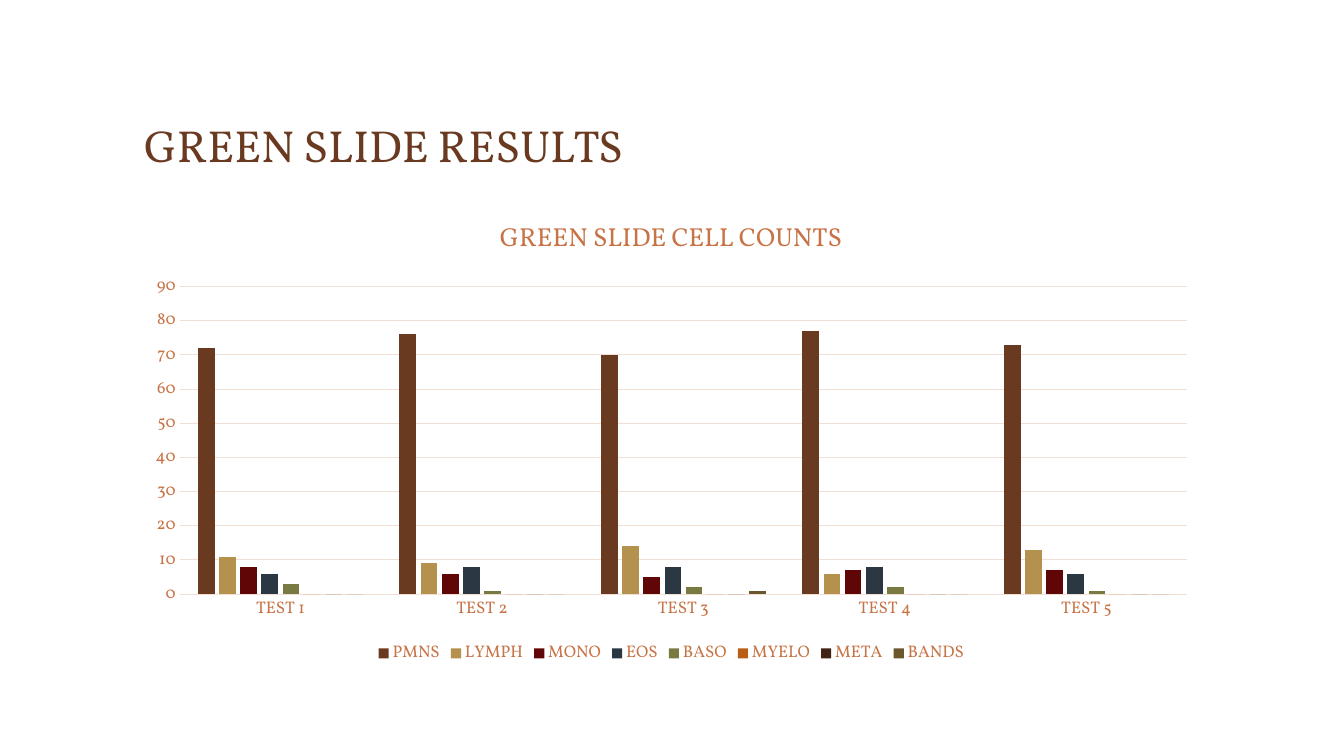
from dataclasses import dataclass

from pptx import Presentation
from pptx.chart.data import CategoryChartData
from pptx.dml.color import RGBColor
from pptx.enum.chart import XL_CHART_TYPE as ChartType
from pptx.enum.chart import XL_LEGEND_POSITION as LegendPosition
from pptx.enum.chart import XL_TICK_MARK as TickMark
from pptx.enum.text import MSO_ANCHOR as Anchor
from pptx.util import Cm, Pt


@dataclass(frozen=True)
class Theme:
    font: str = "Vollkorn"
    heading: str = "6A3A20"
    label: str = "C77345"
    grid: str = "F2DFD4"
    heading_size: float = 32
    chart_title_size: float = 18.6
    label_size: float = 12
    grid_width: float = 0.75


THEME = Theme()

TESTS = [f"TEST {number}" for number in range(1, 6)]
CELL_COUNTS = [
    ("PMNS", (72, 76, 70, 77, 73), "6A3A20"),
    ("LYMPH", (11, 9, 14, 6, 13), "B4914C"),
    ("MONO", (8, 6, 5, 7, 7), "610606"),
    ("EOS", (6, 8, 8, 8, 6), "2B3742"),
    ("BASO", (3, 1, 2, 2, 1), "787A41"),
    ("MYELO", (0, 0, 0, 0, 0), "B95E14"),
    ("META", (0, 0, 0, 0, 0), "402313"),
    ("BANDS", (0, 0, 1, 0, 0), "6C572D"),
]


def style_font(font, size, color):
    font.name = THEME.font
    font.size = Pt(size)
    font.bold = False
    font.color.rgb = RGBColor.from_string(color)


def style_line(line):
    line.color.rgb = RGBColor.from_string(THEME.grid)
    line.width = Pt(THEME.grid_width)


def add_heading(slide, box, text):
    frame = slide.shapes.add_textbox(*box).text_frame
    frame.word_wrap = True
    frame.vertical_anchor = Anchor.BOTTOM
    run = frame.paragraphs[0].add_run()
    run.text = text
    style_font(run.font, THEME.heading_size, THEME.heading)


def style_axes(chart):
    tests, counts = chart.category_axis, chart.value_axis
    for axis in (tests, counts):
        axis.major_tick_mark = axis.minor_tick_mark = TickMark.NONE
        style_font(axis.tick_labels.font, THEME.label_size, THEME.label)
    style_line(tests.format.line)
    counts.format.line.fill.background()
    counts.minimum_scale, counts.maximum_scale = 0, 90
    counts.major_unit = 10
    counts.has_major_gridlines = True
    style_line(counts.major_gridlines.format.line)


def add_cell_count_chart(slide, box, title):
    data = CategoryChartData()
    data.categories = TESTS
    for cell, counts, _ in CELL_COUNTS:
        data.add_series(cell, counts)
    chart = slide.shapes.add_chart(ChartType.COLUMN_CLUSTERED, *box, data).chart
    style_font(chart.font, THEME.label_size, THEME.label)

    chart.has_title = True
    run = chart.chart_title.text_frame.paragraphs[0].add_run()
    run.text = title
    style_font(run.font, THEME.chart_title_size, THEME.label)
    chart.chart_title.include_in_layout = False

    chart.has_legend = True
    chart.legend.position = LegendPosition.BOTTOM
    chart.legend.include_in_layout = False
    style_font(chart.legend.font, THEME.label_size, THEME.label)

    style_axes(chart)
    bars = chart.plots[0]
    bars.vary_by_categories = False
    bars.gap_width, bars.overlap = 219, -27
    for series, (_, _, color) in zip(bars.series, CELL_COUNTS):
        series.format.fill.solid()
        series.format.fill.fore_color.rgb = RGBColor.from_string(color)


def add_results_slide(deck):
    slide = deck.slides.add_slide(deck.slide_layouts[6])
    left, width = Cm(3.38), Cm(27.08)
    add_heading(slide, (left, Cm(1.2), width, Cm(3.25)), "GREEN SLIDE RESULTS")
    add_cell_count_chart(slide, (left, Cm(5), width, Cm(11.86)),
                         "GREEN SLIDE CELL COUNTS")


def main():
    deck = Presentation()
    deck.slide_width, deck.slide_height = Cm(33.87), Cm(19.05)
    add_results_slide(deck)
    deck.save("out.pptx")


if __name__ == "__main__":
    main()
